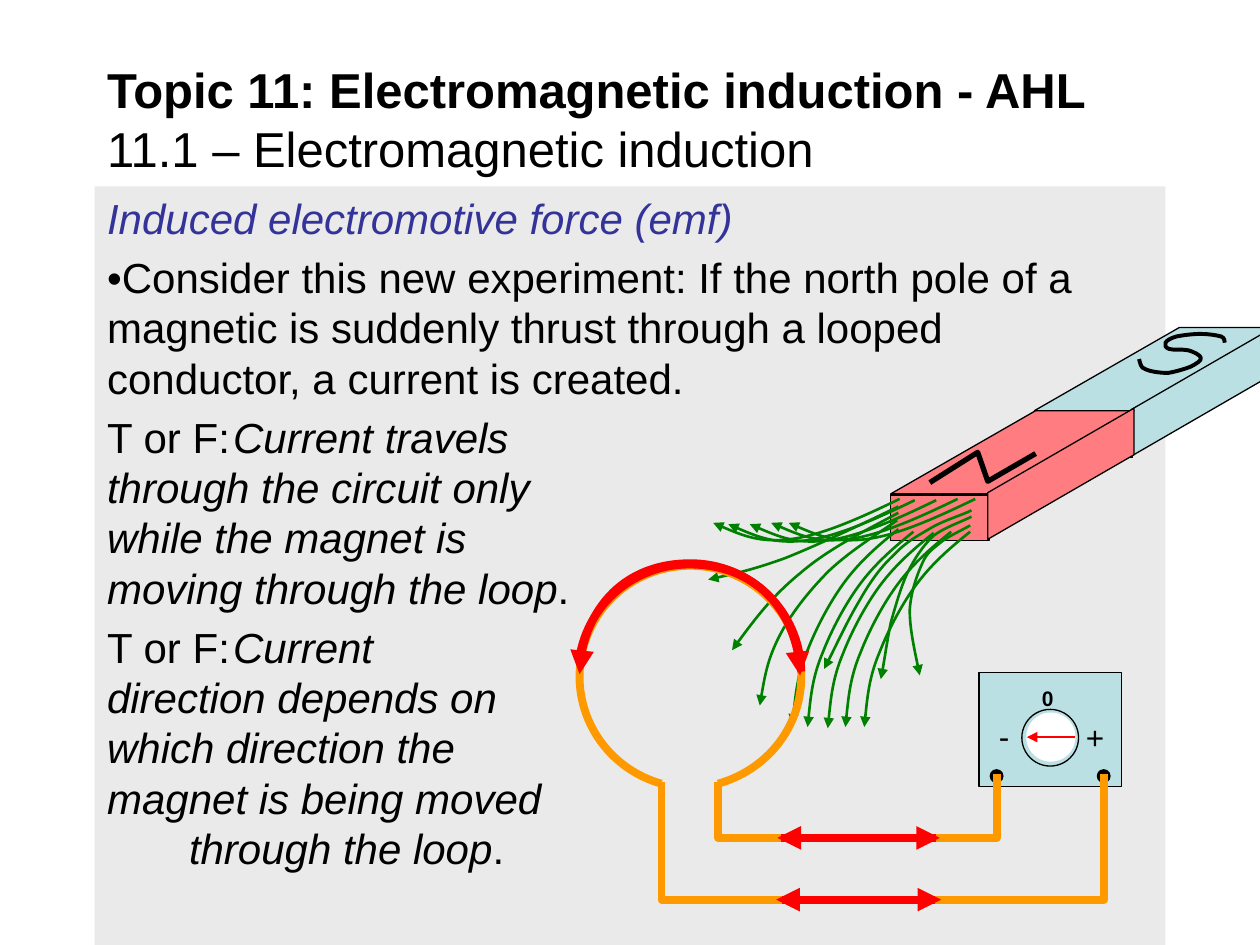
import pptx
import pptx.util
import pptx.dml.color
import pptx.enum.shapes
import pptx.enum.text
import pptx.oxml.ns
import lxml.etree

deck = pptx.Presentation()
deck.slide_width = pptx.util.Inches(10)
deck.slide_height = pptx.util.Inches(7.5)
unit = deck.slide_width // 1000
page = deck.slides.add_slide(deck.slide_layouts[1])
shapes = page.shapes
colour = pptx.dml.color.RGBColor.from_string
name = pptx.oxml.ns.qn
preset = pptx.enum.shapes.MSO_SHAPE
straight = pptx.enum.shapes.MSO_CONNECTOR.STRAIGHT


def finish(shape, line, weight, fill=None, arrow=False):
    if hasattr(shape, "fill"):
        if fill:
            shape.fill.solid()
            shape.fill.fore_color.rgb = colour(fill)
        else:
            shape.fill.background()
    shape.line.color.rgb = colour(line)
    shape.line.width = pptx.util.Pt(weight)
    if arrow:
        lxml.etree.SubElement(shape.line._get_or_add_ln(), name("a:tailEnd"), type="triangle")
    lxml.etree.SubElement(shape._element.spPr, name("a:effectLst"))


def draw(points, line, weight, fill=None, arrow=False, curved=False):
    builder = shapes.build_freeform(*points[0], scale=unit)
    builder.add_line_segments(points[1:], close=fill is not None)
    outline = builder.convert_to_shape()
    if curved:
        segments = list(outline._element.iter(name("a:lnTo")))
        for first in range(0, len(segments), 3):
            curve = lxml.etree.Element(name("a:cubicBezTo"))
            segments[first].addprevious(curve)
            for segment in segments[first:first + 3]:
                curve.append(segment[0])
                segment.getparent().remove(segment)
    finish(outline, line, weight, fill, arrow)


title, body = shapes.title, page.placeholders[1]
for box, top, height, anchor in [(title, 45, 98, "MIDDLE"), (body, 148, 602, "TOP")]:
    box.left, box.top, box.width, box.height = 75 * unit, top * unit, 850 * unit, height * unit
    box.text_frame.word_wrap = True
    box.text_frame.auto_size = pptx.enum.text.MSO_AUTO_SIZE.NONE
    box.text_frame.vertical_anchor = pptx.enum.text.MSO_ANCHOR[anchor]
body.fill.solid()
body.fill.fore_color.rgb = colour("EAEAEA")

para = title.text_frame.paragraphs[0]
para.alignment = pptx.enum.text.PP_ALIGN.LEFT
for text, bold in [("Topic 11: Electromagnetic induction - AHL", True),
                   ("11.1 – Electromagnetic induction", False)]:
    if not bold:
        para.add_line_break()
    span = para.add_run()
    span.text = text
    span.font.name, span.font.size, span.font.bold = "Arial", pptx.util.Pt(28), bold
    span.font.color.rgb = colour("000000")

paragraphs = [
    (0, 4.8, "333399", [("Induced electromotive force (emf)", True)]),
    (0, 4.8, "000000", [("•Consider this new experiment: If the north pole of a magnetic is "
                         "suddenly thrust through a looped\nconductor, a current is created.",
                         False)]),
    (0, 4.8, "000000", [("T or F:\t", False),
                        ("Current travels\nthrough the circuit only\nwhile the magnet is\n"
                         "moving through the loop", True), (".", False)]),
    (0, 4.8, "000000", [("T or F:\t", False),
                        ("Current\ndirection depends on\nwhich direction the\n"
                         "magnet is being moved", True)]),
    (65, 0, "000000", [("through the loop", True), (".", False)]),
]
for index, (indent, gap, ink, pieces) in enumerate(paragraphs):
    para = body.text_frame.add_paragraph() if index else body.text_frame.paragraphs[0]
    para.space_before = pptx.util.Pt(gap)
    settings = para._p.get_or_add_pPr()
    settings.set("marL", str(indent * unit))
    settings.set("indent", "0")
    lxml.etree.SubElement(settings, name("a:buNone"))
    for text, italic in pieces:
        for number, row in enumerate(text.split("\n")):
            if number:
                para.add_line_break()
            span = para.add_run()
            span.text = row
            span.font.name, span.font.size, span.font.italic = "Arial", pptx.util.Pt(24), italic
            span.font.color.rgb = colour(ink)

meter = [
    (preset.RECTANGLE, 777, 534, 113, 90, "BBE0E3", "000000"),
    (preset.OVAL, 811, 563, 45, 45, None, "000000"),
    (preset.OVAL, 786, 611, 10, 10, "000000", "000000"),
    (preset.OVAL, 871, 611, 10, 10, "000000", "000000"),
    (preset.OVAL, 815, 566, 38, 38, "FFFFFF", "FFFFFF"),
]
for kind, left, top, width, height, fill, line in meter:
    part = shapes.add_shape(kind, left * unit, top * unit, width * unit, height * unit)
    finish(part, line, 0.75, fill)
for text, left, top, width, height, size in [("-", 783, 564, 31, 40, 18),
                                             ("0", 817, 539, 42, 30, 12),
                                             ("+", 852, 565, 31, 40, 18)]:
    label = shapes.add_textbox(left * unit, top * unit, width * unit, height * unit)
    label.text_frame.word_wrap = True
    label.text_frame.auto_size = pptx.enum.text.MSO_AUTO_SIZE.SHAPE_TO_FIT_TEXT
    span = label.text_frame.paragraphs[0].add_run()
    span.text = text
    span.font.name, span.font.size, span.font.bold = "Arial", pptx.util.Pt(size), text == "0"
    span.font.color.rgb = colour("000000")

for x, y, fill in [(821, 327, "BBE0E3"), (707, 393, "FF7C80")]:
    front = shapes.add_shape(preset.RECTANGLE, x * unit, y * unit, 78 * unit, 36 * unit)
    finish(front, "000000", 0.75, fill)
    for face in ([(0, -1), (115, -67), (193, -67), (77, -1)],
                 [(77, 35), (77, -2), (193, -69), (193, -32)]):
        draw([(x + dx, y + dy) for dx, dy in face], "000000", 0.75, fill)
draw([(738, 383), (776, 359), (784, 382), (822, 360)], "000000", 3)
draw([(972, 272), (972, 271), (972, 268), (969, 267), (965, 266), (959, 265), (953, 265),
      (947, 265), (939, 266), (934, 267), (930, 268), (926, 270), (925, 272),
      (924, 274), (925, 276), (928, 277), (931, 278), (938, 277), (943, 278),
      (947, 279), (953, 282), (953, 284), (954, 286), (949, 289), (945, 291),
      (940, 293), (933, 295), (927, 296), (921, 296), (913, 295), (909, 293),
      (905, 292), (905, 288), (904, 285)], "000000", 2.25, curved=True)

shallow = [(0, 0), (-31, 15), (-62, 29), (-87, 32), (-111, 35), (-130, 27), (-148, 19)]
steep = [(0, 0), (-15, 12), (-30, 25), (-42, 41), (-54, 57), (-65, 78), (-72, 96),
         (-80, 115), (-82, 135), (-84, 155)]
field = [[(x + dx, y + dy) for dx, dy in family]
         for family, starts in [
             (shallow, [(714, 396), (726, 397), (743, 397), (760, 396), (774, 396)]),
             (steep, [(713, 420), (725, 422), (741, 423), (755, 422), (770, 422)])]
         for x, y in starts]
field += [
    [(712, 413), (693, 426), (674, 438), (658, 453), (642, 469), (627, 488), (618, 506),
     (609, 524), (606, 542), (603, 560)],
    [(713, 407), (685, 422), (657, 436), (635, 455), (613, 473), (597, 494), (581, 516)],
    [(713, 402), (680, 418), (648, 433), (623, 443), (598, 452), (580, 456), (562, 460)],
    [(770, 417), (761, 422), (752, 426), (746, 431), (740, 436), (736, 438), (732, 447),
     (728, 456), (723, 469), (722, 484), (722, 498), (726, 517), (730, 536)],
    [(771, 410), (766, 413), (748, 419), (740, 426), (732, 434), (726, 443), (720, 455),
     (715, 466), (711, 480), (707, 494), (704, 509), (701, 530), (699, 539)],
    [(771, 405), (766, 408), (749, 413), (739, 419), (729, 425), (719, 430), (710, 440),
     (700, 449), (691, 461), (682, 477), (673, 492), (660, 520), (654, 531)],
]
for points in field:
    draw(points, "008000", 1.5, arrow=True, curved=True)

draw([(525, 622), (486, 611), (460, 576), (460, 537), (460, 488), (499, 449), (548, 449),
      (596, 449), (636, 488), (636, 537), (636, 577), (609, 611), (570, 622)],
     "FF9900", 4.5, curved=True)
for left, right, bottom in [(525, 876, 714), (570, 791, 665)]:
    draw([(left, 621), (left, bottom), (right, bottom), (right, 614)], "FF9900", 4.5)
for arc in ([(460, 521), (467, 479), (504, 448), (547, 448), (596, 448), (635, 488), (635, 536)],
            [(636, 533), (635, 485), (596, 447), (548, 447), (499, 447), (460, 487), (460, 535)]):
    draw(arc, "FF0000", 4.5, arrow=True, curved=True)

for start, end, y, weight in [(853, 815, 585, 1.5),
                              (620, 746, 665, 4.5), (743, 617, 665, 4.5),
                              (621, 747, 714, 4.5), (742, 616, 714, 4.5)]:
    current = shapes.add_connector(straight, start * unit, y * unit, end * unit, y * unit)
    finish(current, "FF0000", weight, arrow=True)

deck.save("out.pptx")
